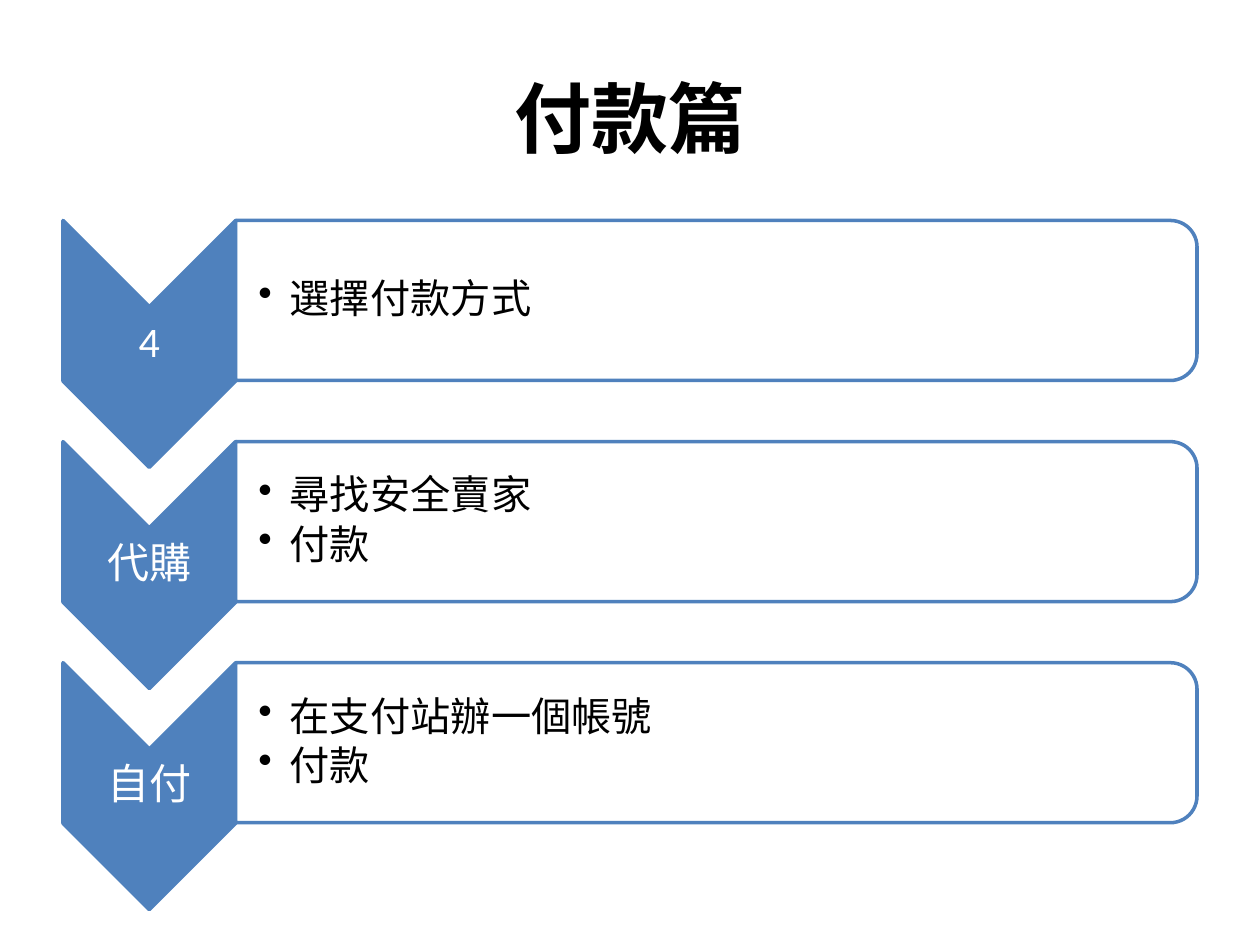
from dataclasses import dataclass

from lxml import etree
from pptx import Presentation
from pptx import util as u
from pptx.dml.color import RGBColor
from pptx.enum import shapes, text
from pptx.oxml.ns import qn


@dataclass(frozen=True)
class Theme:
    accent: str = "4F81BD"
    paper: str = "FFFFFF"
    ink: str = "000000"
    latin: str = "Calibri"
    asian: str = "Noto Sans CJK SC"
    title_size: float = 44
    label_size: float = 24
    item_size: float = 23
    outline: float = 2


THEME = Theme()

# Grid in inches: one row per step, a chevron column and a panel column.
LEFT, TOP, PITCH = 0.5, 1.75, 1.755
CHEVRON_WIDTH, CHEVRON_HEIGHT = 1.37, 1.96
PANEL_WIDTH, PANEL_HEIGHT = 7.63, 1.27
PANEL_LEFT = LEFT + CHEVRON_WIDTH
INSET = 0.02

STEPS = [
    ("4", ["選擇付款方式"]),
    ("代購", ["尋找安全賣家", "付款"]),
    ("自付", ["在支付站辦一個帳號", "付款"]),
]


def add_bullet(para, indent=0.25):
    props = para._p.get_or_add_pPr()
    props.set("marL", str(u.Inches(indent)))
    props.set("indent", str(-u.Inches(indent)))
    etree.SubElement(props, qn("a:buChar")).set("char", "•")


def write(frame, lines, size, color=THEME.ink, bold=False, bullet=False,
          align=text.PP_ALIGN.LEFT, spacing=None, after=None):
    """Fill a text frame with one paragraph per line, centred vertically."""
    frame.word_wrap = True
    frame.vertical_anchor = text.MSO_ANCHOR.MIDDLE
    for index, line in enumerate(lines):
        para = frame.add_paragraph() if index else frame.paragraphs[0]
        para.alignment = align
        if spacing:
            para.line_spacing = spacing
        if after is not None:
            para.space_after = u.Pt(after)
        if bullet:
            add_bullet(para)
        span = para.add_run()
        span.text = line
        font = span.font
        font.size, font.bold = u.Pt(size), bold
        font.color.rgb = RGBColor.from_string(color)
        font.name = THEME.latin if line.isascii() else THEME.asian
        east = etree.SubElement(span._r.get_or_add_rPr(), qn("a:ea"))
        east.set("typeface", THEME.asian)


def add_textbox(page, left, top, width, height, lines, size,
                left_inset=INSET, **style):
    box = page.shapes.add_textbox(*map(u.Inches, (left, top, width, height)))
    frame = box.text_frame
    frame.margin_left = u.Inches(left_inset)
    frame.margin_top = frame.margin_right = frame.margin_bottom = u.Inches(INSET)
    write(frame, lines, size, spacing=0.9, **style)


def add_turned_shape(page, kind, left, top, width, height, fill, opacity=100):
    """Add a shape turned 90 degrees that covers the given upright area."""
    shift = (width - height) / 2
    shape = page.shapes.add_shape(
        kind, *map(u.Inches, (left + shift, top - shift, height, width)))
    shape.rotation = 90
    shape.shadow.inherit = False
    shape.fill.solid()
    shape.fill.fore_color.rgb = RGBColor.from_string(fill)
    if opacity < 100:
        color = shape._element.spPr.find(qn("a:solidFill"))[0]
        etree.SubElement(color, qn("a:alpha")).set("val", str(opacity * 1000))
    shape.line.color.rgb = RGBColor.from_string(THEME.accent)
    shape.line.width = u.Pt(THEME.outline)


def add_title(page, wording):
    title = page.shapes.title
    title.left, title.top, title.width, title.height = map(
        u.Inches, (LEFT, 0.3, 9, 1.25))
    write(title.text_frame, [wording], THEME.title_size, bold=True,
          align=text.PP_ALIGN.CENTER)


def add_step(page, top, label, items):
    add_turned_shape(page, shapes.MSO_SHAPE.CHEVRON, LEFT, top,
                     CHEVRON_WIDTH, CHEVRON_HEIGHT, THEME.accent)
    # The label fills the band between the notch and the shoulders.
    notch = CHEVRON_WIDTH / 2
    add_textbox(page, LEFT, top + notch, CHEVRON_WIDTH,
                CHEVRON_HEIGHT - CHEVRON_WIDTH, [label], THEME.label_size,
                color=THEME.paper, align=text.PP_ALIGN.CENTER, after=8.4)
    add_turned_shape(page, shapes.MSO_SHAPE.ROUND_2_SAME_RECTANGLE, PANEL_LEFT,
                     top, PANEL_WIDTH, PANEL_HEIGHT, THEME.paper, opacity=90)
    margin = 0.06
    add_textbox(page, PANEL_LEFT, top + margin, PANEL_WIDTH - margin,
                PANEL_HEIGHT - 2 * margin, items, THEME.item_size,
                left_inset=0.18, bullet=True, after=3.45)


def main():
    deck = Presentation()
    deck.slide_width, deck.slide_height = u.Inches(10), u.Inches(7.5)
    page = deck.slides.add_slide(deck.slide_layouts[5])
    add_title(page, "付款篇")
    for row, (label, items) in enumerate(STEPS):
        add_step(page, TOP + row * PITCH, label, items)
    deck.save("out.pptx")


if __name__ == "__main__":
    main()
